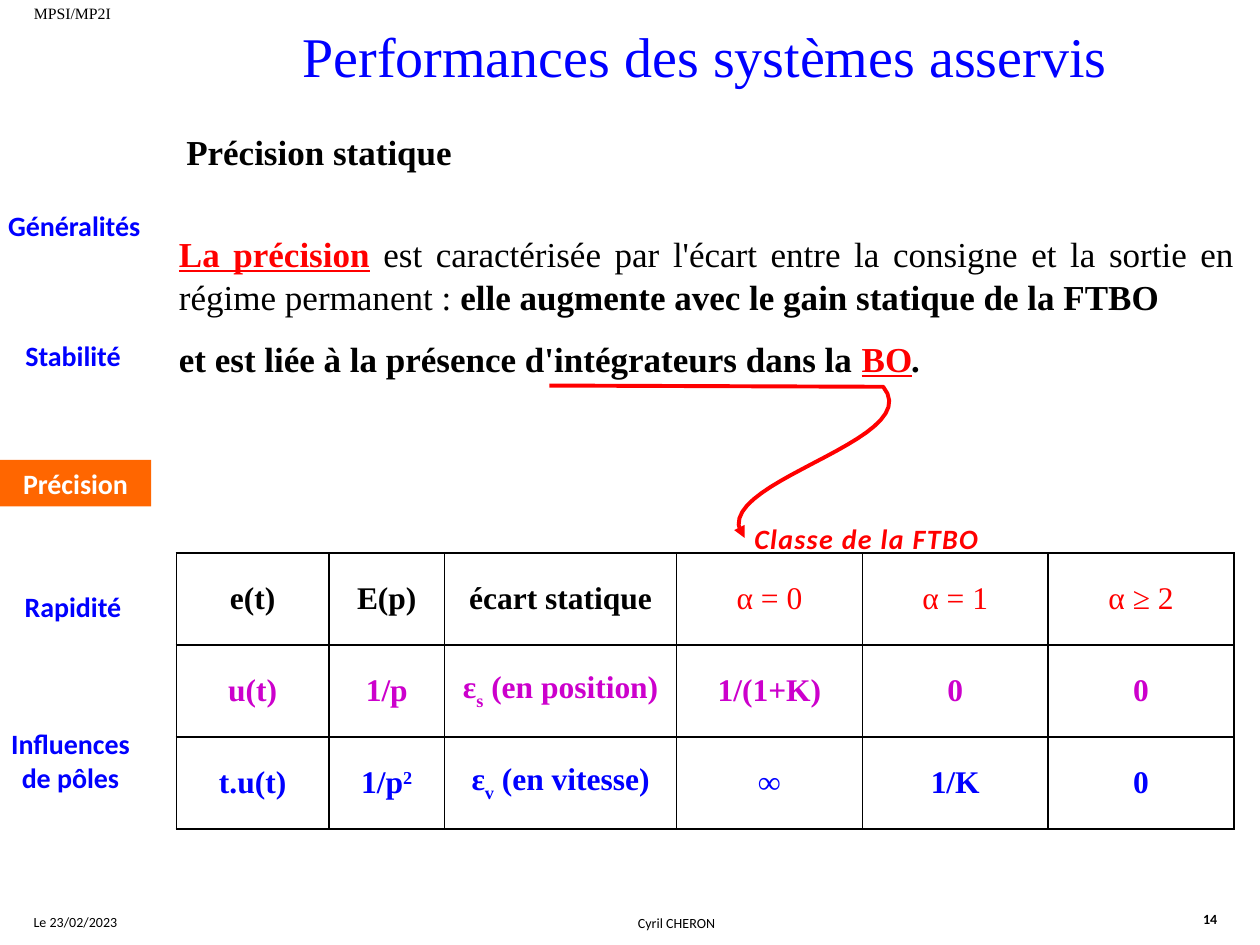
from dataclasses import dataclass
from lxml.etree import SubElement as Sub
from pptx import Presentation
from pptx.dml.color import RGBColor as Rgb
from pptx.enum.shapes import MSO_SHAPE as Kind
from pptx.enum.text import MSO_ANCHOR as Anchor, MSO_AUTO_SIZE as Auto, PP_ALIGN as Align
from pptx.oxml import parse_xml
from pptx.oxml.ns import qn
from pptx.util import Inches, Pt


@dataclass(frozen=True)
class Theme:
    serif: str = "Times New Roman"
    sans: str = "Calibri"
    ink: str = "000000"
    blue: str = "0000FF"
    red: str = "FF0000"
    pink: str = "CC00CC"
    tab: str = "FF6600"
    white: str = "FFFFFF"
    title: int = 32
    body: int = 20
    cell: int = 18
    menu: int = 16
    head: int = 9
    foot: int = 8


T = Theme()
COLS, ROWS = 100, 75
UNIT = Inches(10) // COLS


def grid(*vals):
    return [round(v * UNIT) for v in vals]


def style(run, size, face, color, marks=""):
    font = run.font
    font.size, font.name = Pt(size), face
    font.color.rgb = Rgb.from_string(color)
    font.bold, font.italic = "b" in marks, "i" in marks
    font.underline = "u" in marks


def fill(para, parts, size, face, align=Align.CENTER):
    para.alignment = align
    for text, color, marks in parts:
        run = para.add_run()
        run.text = text
        style(run, size, face, color, marks)
        if "^" in marks or "_" in marks:
            run.font._element.set("baseline", "30000" if "^" in marks else "-30000")


def label(slide, box, text, size, face, color, marks="", align=Align.CENTER, pad=1, wrap=True):
    frame = slide.shapes.add_textbox(*grid(*box)).text_frame
    write(frame, text, size, face, color, marks, align, pad, wrap)
    return frame


def write(frame, text, size, face, color, marks="", align=Align.CENTER, pad=1, wrap=True):
    frame.word_wrap = wrap
    frame.auto_size = Auto.NONE
    frame.vertical_anchor = Anchor.TOP
    frame.margin_left, frame.margin_right = grid(pad, pad)
    frame.margin_top, frame.margin_bottom = grid(0.5, 0.5)
    frame.text = text
    para = frame.paragraphs[0]
    para.alignment = align
    for run in para.runs:
        style(run, size, face, color, marks)


def place(shape, box):
    shape.left, shape.top, shape.width, shape.height = grid(*box)


def edges(slide):
    label(slide, (1.7, -0.2, 10, 2.5), "MPSI/MP2I", T.head, T.serif, T.ink, align=Align.LEFT)
    label(slide, (1.7, 72, 8.6, 2.4), "Le 23/02/2023", T.foot, T.sans, T.ink, wrap=False)
    label(slide, (12.5, 72.1, 82.4, 2.4), "Cyril CHERON", T.foot, T.sans, T.ink)
    label(slide, (94.5, 71.8, 3.9, 2.4), "14", T.foot, T.sans, T.ink, "b", Align.LEFT, wrap=False)


def menu(slide, box, items, active):
    x, y, wide, high = box
    for text, dx, dy, lines in items:
        spot = (x + dx, y + dy, wide, high * lines)
        if text == active:
            tab = slide.shapes.add_shape(Kind.RECTANGLE, *grid(x, y + dy, wide + 0.4, high))
            tab.shadow.inherit = False
            tab.fill.solid()
            tab.fill.fore_color.rgb = Rgb.from_string(T.tab)
            tab.line.fill.background()
            write(tab.text_frame, text, T.menu, T.sans, T.white, "b", pad=0.4)
        else:
            label(slide, spot, text, T.menu, T.sans, T.blue, "b", pad=0.4)


def heading(slide, box):
    shape = slide.shapes.title
    place(shape, box)
    write(shape.text_frame, "Performances des systèmes asservis", T.title, T.serif, T.blue, wrap=False)


def body(slide, box):
    shape = slide.placeholders[1]
    place(shape, box)
    frame = shape.text_frame
    frame.auto_size = Auto.NONE
    paras = [
        [("La précision", T.red, "bu"),
         (" est caractérisée par l'écart entre la consigne et la sortie en régime permanent : ", T.ink, ""),
         ("elle augmente avec le gain statique de la FTBO", T.ink, "b")],
        [("et est liée à la présence d'intégrateurs dans la ", T.ink, "b"),
         ("BO", T.red, "bu"), (".", T.ink, "bi")],
    ]
    for i, parts in enumerate(paras):
        para = frame.paragraphs[0] if i == 0 else frame.add_paragraph()
        para.space_before = Pt(T.body / 2 * i)
        para.line_spacing = 1.04
        props = para._p.get_or_add_pPr()
        props.set("marL", "0")
        props.set("indent", "0")
        Sub(props, qn("a:buNone"))
        fill(para, parts, T.body, T.serif, Align.JUSTIFY)


def border(cell):
    props = cell._tc.get_or_add_tcPr()
    ns = "http://schemas.openxmlformats.org/drawingml/2006/main"
    for i, side in enumerate("LRTB"):
        props.insert(i, parse_xml(
            f'<a:ln{side} xmlns:a="{ns}" w="12700"><a:solidFill>'
            f'<a:srgbClr val="{T.ink}"/></a:solidFill></a:ln{side}>'))


def errors(slide, box):
    wides = [12.1, 9.2, 18.4, 14.75, 14.75, 14.75]
    rows = [
        (T.ink, ["e(t)", "E(p)", "écart statique", "α = 0", "α = 1", "α ≥ 2"]),
        (T.pink, ["u(t)", "1/p", "ε|_s| (en position)", "1/(1+K)", "0", "0"]),
        (T.blue, ["t.u(t)", "1/p|^2", "ε|_v| (en vitesse)", "∞", "1/K", "0"]),
    ]
    table = slide.shapes.add_table(len(rows), len(wides), *grid(*box)).table
    table.first_row = table.horz_banding = False
    for col, wide in zip(table.columns, wides):
        col.width = round(wide * UNIT)
    for r, (color, texts) in enumerate(rows):
        table.rows[r].height = round(box[3] / len(rows) * UNIT)
        for c, text in enumerate(texts):
            cell = table.cell(r, c)
            cell.fill.background()
            cell.vertical_anchor = Anchor.MIDDLE
            border(cell)
            ranks = r == 0 and c > 2
            tone, bold = (T.red, "") if ranks else (color, "b")
            parts = [(bit.lstrip("_^"), tone, bold + (bit[0] if bit[0] in "_^" else ""))
                     for bit in text.split("|")]
            fill(cell.text_frame.paragraphs[0], parts, T.cell, T.serif)


def curve(ends, steps=24):
    for i in range(1, steps + 1):
        t = i / steps
        mix = ((1 - t) ** 3, 3 * t * (1 - t) ** 2, 3 * t * t * (1 - t), t ** 3)
        yield tuple(round(sum(m * p[k] for m, p in zip(mix, ends)) * UNIT) for k in (0, 1))


def arrow(slide, box):
    x, y, wide, high = box
    bend = (x + 26.5, y + 0.1)
    ends = [bend, (x + 30.1, y + 4.5), (x + 11.9, y + 7.8), (x + 15.5, y + high)]
    path = slide.shapes.build_freeform(*grid(x, y))
    path.add_line_segments([tuple(grid(*bend)), *curve(ends)], close=False)
    shape = path.convert_to_shape()
    shape.shadow.inherit = False
    shape.fill.background()
    shape.line.color.rgb = Rgb.from_string(T.red)
    shape.line.width = Pt(2.25)
    Sub(shape.line._get_or_add_ln(), qn("a:tailEnd"), type="triangle")


def note(slide, box):
    frame = label(slide, box, "Classe de la FTBO", T.menu, T.sans, T.red, "bi")
    for run in frame.paragraphs[0].runs:
        run.font._element.set("spc", "80")


def main():
    deck = Presentation()
    deck.slide_width, deck.slide_height = grid(COLS, ROWS)
    slide = deck.slides.add_slide(deck.slide_layouts[1])
    edges(slide)
    heading(slide, (21.7, 1.2, 68.5, 6.4))
    items = [("Généralités", 0.1, 0, 1), ("Stabilité", 0, 10.3, 1), ("Précision", 0, 20.4, 1),
             ("Rapidité", 0, 30.2, 1), ("Influences de pôles", -0.2, 41.1, 1.73)]
    menu(slide, (0, 16.1, 11.6, 3.7), items, "Précision")
    body(slide, (13.2, 17.8, 85.8, 12.8))
    errors(slide, (14, 43.9, 83.95, 21.9))
    arrow(slide, (43.6, 30.6, 26.9, 12.1))
    note(slide, (54, 40.9, 29.5, 3.7))
    label(slide, (13.8, 9.9, 85.1, 4.4), "Précision statique", T.body, T.serif, T.ink, "b", Align.LEFT)
    deck.save("out.pptx")


if __name__ == "__main__":
    main()
